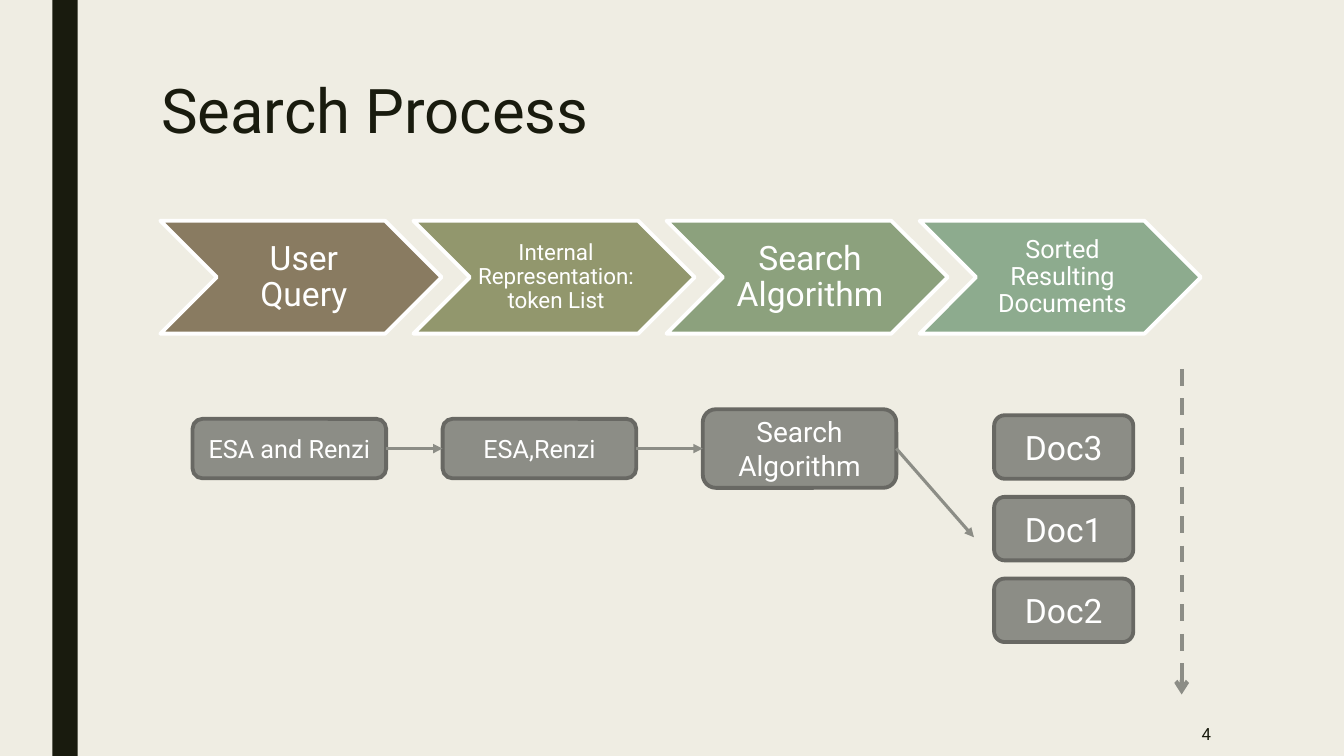
import pptx
import pptx.util
import pptx.dml.color
import pptx.enum.dml
import pptx.enum.shapes
import pptx.enum.text
import pptx.oxml
import pptx.oxml.ns

Inches = pptx.util.Inches
SHAPE = pptx.enum.shapes.MSO_SHAPE
ALIGN = pptx.enum.text.PP_ALIGN
ANCHOR = pptx.enum.text.MSO_ANCHOR

FONT = "Roboto"
INK, PAPER, WHITE = "191B0E", "EFEDE3", "FFFFFF"
GRAY, DARK_GRAY = "8C8D86", "686863"


def rgb(value):
    return pptx.dml.color.RGBColor.from_string(value)


def set_format(obj, formats):
    for name, value in formats.items():
        setattr(obj, name, value)


def write(sp, text, size, color, align, anchor, spacing=1.0, insets=(0.1, 0.05, 0.1, 0.05)):
    tf = sp.text_frame
    sides = ("margin_left", "margin_top", "margin_right", "margin_bottom")
    set_format(tf, dict(zip(sides, map(Inches, insets))))
    set_format(tf, {"word_wrap": True, "vertical_anchor": anchor,
                    "auto_size": pptx.enum.text.MSO_AUTO_SIZE.NONE})
    p = tf.paragraphs[0]
    set_format(p, {"alignment": align, "line_spacing": spacing})
    r = p.add_run()
    r.text = text
    set_format(r.font, {"name": FONT, "size": pptx.util.Pt(size)})
    r.font.color.rgb = rgb(color)


def add_block(slide, kind, box, fill, line=None):
    sp = slide.shapes.add_shape(kind, *map(Inches, box))
    sp.shadow.inherit = False
    sp.fill.solid()
    sp.fill.fore_color.rgb = rgb(fill)
    if line:
        sp.line.color.rgb = rgb(line)
        sp.line.width = pptx.util.Pt(2.75)
    else:
        sp.line.fill.background()
    return sp


def add_arrow(slide, start, end, width=2.25, head="triangle", dash=None):
    cxn = slide.shapes.add_connector(
        pptx.enum.shapes.MSO_CONNECTOR.STRAIGHT, *map(Inches, start + end))
    cxn.line.color.rgb = rgb(GRAY)
    cxn.line.width = pptx.util.Pt(width)
    if dash:
        cxn.line.dash_style = dash
    ns = pptx.oxml.ns.nsdecls("a")
    cxn.line._get_or_add_ln().append(
        pptx.oxml.parse_xml(f'<a:tailEnd {ns} type="{head}"/>'))
    cxn._element.spPr.append(pptx.oxml.parse_xml(f"<a:effectLst {ns}/>"))
    return cxn


def add_frame(slide, width, height):
    # Background, side bar, title and page number
    slide.background.fill.solid()
    slide.background.fill.fore_color.rgb = rgb(PAPER)
    add_block(slide, SHAPE.RECTANGLE, (0.52, 0, 0.25, height), INK)
    title = slide.shapes.title
    set_format(title, {"left": Inches(1.5), "top": Inches(0.75),
                       "width": Inches(10.5), "height": Inches(1.62)})
    write(title, "Search Process", 44, INK, ALIGN.LEFT, ANCHOR.TOP, 0.89)
    number = slide.shapes.add_textbox(
        *map(Inches, (width - 2.97, height - 0.44, 1.75, 0.44)))
    write(number, "4", 12, INK, ALIGN.RIGHT, ANCHOR.MIDDLE)


def add_steps(slide, left, top, width, height):
    # Chevron row: each step overlaps the next by a tenth of its width
    steps = [("User Query", 24, "897B61"),
             ("Internal Representation: token List", 16, "92976D"),
             ("Search Algorithm", 24, "8CA17D"),
             ("Sorted Resulting Documents", 18, "8DAB8E")]
    step_w = width / (1 + 0.9 * (len(steps) - 1))
    for i, (text, size, fill) in enumerate(steps):
        box = (left + i * 0.9 * step_w, top, step_w, height)
        sp = add_block(slide, SHAPE.CHEVRON, box, fill, WHITE)
        pad = size / 600
        write(sp, text, size, WHITE, ALIGN.CENTER, ANCHOR.MIDDLE, 0.9,
              (pad * 2.5, pad, pad, pad))


def add_example(slide, left, middle):
    # Query boxes joined by arrows, all centred on one line
    box_w = 1.92
    boxes = [("ESA and Renzi", 18, 0, 0.59),
             ("ESA,Renzi", 18, 2.48, 0.59),
             ("Search Algorithm", 20, 5.06, 0.78)]
    previous = None
    for text, size, dx, box_h in boxes:
        box = (left + dx, middle - box_h / 2, box_w, box_h)
        sp = add_block(slide, SHAPE.ROUNDED_RECTANGLE, box, GRAY, DARK_GRAY)
        write(sp, text, size, WHITE, ALIGN.CENTER, ANCHOR.MIDDLE)
        if previous:
            cxn = add_arrow(slide, (0, 0), (1, 0))
            cxn.begin_connect(previous, 3)
            cxn.end_connect(sp, 1)
        previous = sp
    # Arrow from the algorithm to the results
    x = left + dx + box_w
    add_arrow(slide, (x, middle), (x + 0.77, middle + 0.88))


def add_results(slide, left, top, width):
    # Ranked documents with the dashed order arrow beside them
    for i, text in enumerate(["Doc3", "Doc1", "Doc2"]):
        box = (left, top + i * 0.81, width, 0.63)
        sp = add_block(slide, SHAPE.ROUNDED_RECTANGLE, box, GRAY, DARK_GRAY)
        write(sp, text, 24, WHITE, ALIGN.CENTER, ANCHOR.MIDDLE)
    x = left + width + 0.48
    add_arrow(slide, (x, top - 0.46), (x, top + 2.77), 3, "arrow",
              pptx.enum.dml.MSO_LINE.DASH)


def main():
    prs = pptx.Presentation()
    width, height = 13.33, 7.5
    set_format(prs, {"slide_width": Inches(width), "slide_height": Inches(height)})
    slide = prs.slides.add_slide(prs.slide_layouts[5])
    add_frame(slide, width, height)
    add_steps(slide, 1.59, 2.19, 10.32, 1.12)
    add_example(slide, 1.91, 4.45)
    add_results(slide, 9.86, 4.12, 1.38)
    prs.save("out.pptx")


if __name__ == "__main__":
    main()
